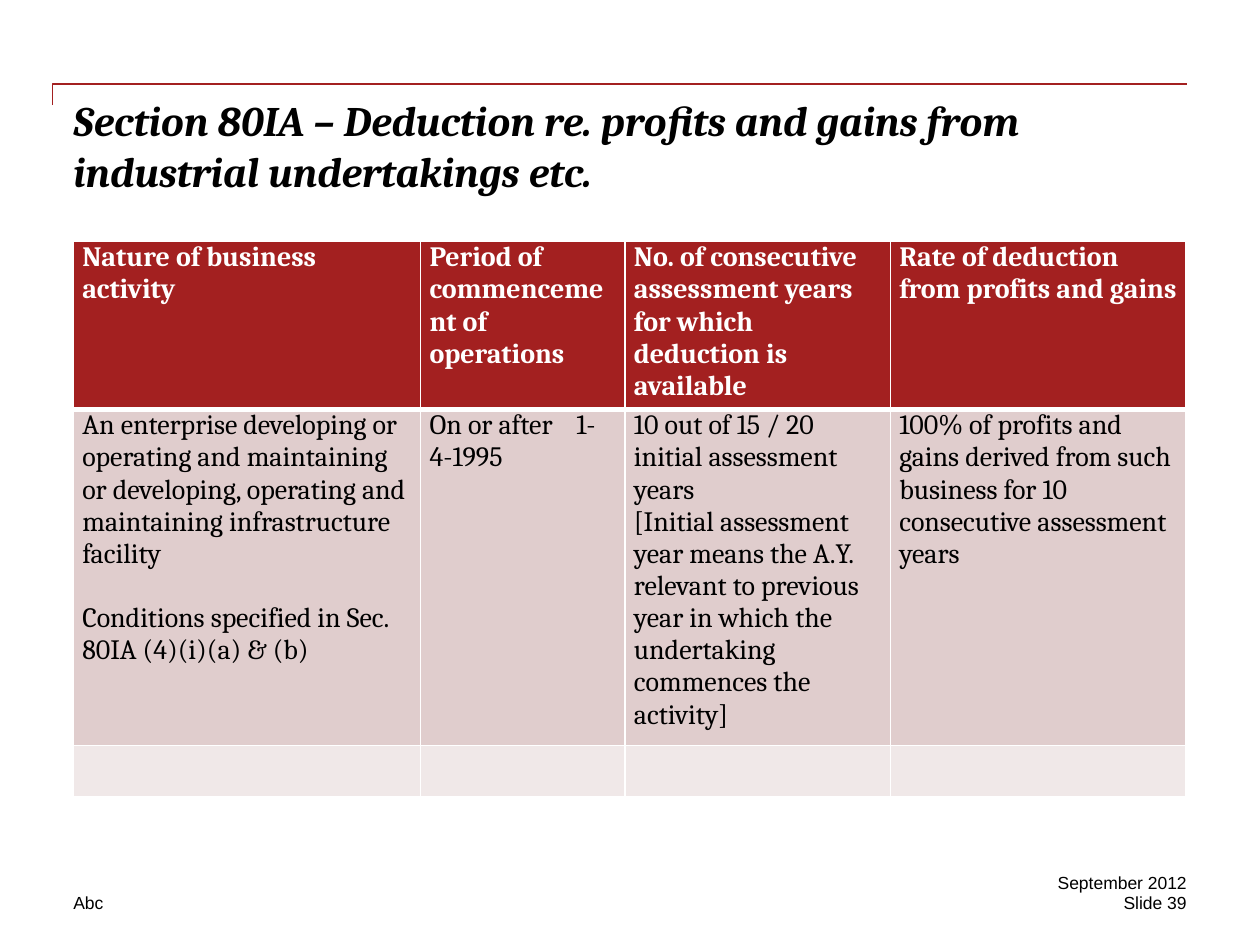
from lxml.etree import SubElement
from pptx import Presentation
from pptx.dml.color import RGBColor
from pptx.enum.text import PP_ALIGN
from pptx.oxml.ns import qn
from pptx.util import Cm, Pt

HUE = {"red": "A32020", "rose": "E0CDCD", "pale": "F0E8E8",
       "black": "000000", "white": "FFFFFF"}


def write(frame, text, font="Cambria", size=16, hue="black", bold=False,
          slant=False, align=PP_ALIGN.LEFT, gap=0):
    frame.word_wrap = True
    for i, line in enumerate(text.split("\n")):
        para = frame.paragraphs[0] if i == 0 else frame.add_paragraph()
        para.alignment = align
        para.space_before = Pt(gap if i else 0)
        run = para.add_run()
        run.text = line
        run.font.name, run.font.size = font, Pt(size)
        run.font.bold, run.font.italic = bold, slant
        run.font.color.rgb = RGBColor.from_string(HUE[hue])


def edge(cell, side, width):
    line = SubElement(cell._tc.get_or_add_tcPr(), qn(f"a:{side}"), w=str(Pt(width)))
    fill = SubElement(line, qn("a:solidFill"))
    SubElement(fill, qn("a:srgbClr"), val=HUE["white"])


deck = Presentation()
deck.slide_width, deck.slide_height = Cm(25.4), Cm(19.05)
slide = deck.slides.add_slide(deck.slide_layouts[6])

# Corner rule above the title
pen = slide.shapes.build_freeform(Cm(1.06), Cm(2.12))
pen.add_line_segments([(Cm(1.06), Cm(1.69)), (Cm(23.92), Cm(1.69))], close=False)
rule = pen.convert_to_shape()
rule.shadow.inherit = False
rule.fill.background()
rule.line.color.rgb = RGBColor.from_string(HUE["red"])
rule.line.width = Pt(1)

# Title and footer
small = {"font": "Arial", "size": 10}
right = {**small, "align": PP_ALIGN.RIGHT}
title = "Section 80IA – Deduction re. profits and gains from industrial undertakings etc."
for text, x, y, w, h, style in [
    (title, 1.48, 1.91, 22.43, 2.54, {"size": 24, "bold": True, "slant": True}),
    ("Abc", 1.48, 17.99, 7.2, 0.42, small),
    ("September 2012", 19.69, 17.57, 4.23, 0.42, right),
    ("Slide 39", 19.69, 17.99, 4.23, 0.42, right),
]:
    frame = slide.shapes.add_textbox(Cm(x), Cm(y), Cm(w), Cm(h)).text_frame
    frame.margin_left = frame.margin_right = frame.margin_top = frame.margin_bottom = 0
    write(frame, text, **style)

# Table of deductions
heads = [
    "Nature of business activity",
    "Period of commencement of operations",
    "No. of consecutive assessment years for which deduction is available",
    "Rate of deduction from profits and gains",
]
facts = [
    "An enterprise developing or operating and maintaining or developing, "
    "operating and maintaining infrastructure facility\n"
    "Conditions specified in Sec. 80IA (4)(i)(a) & (b)",
    "On or after\t1-4-1995",
    "10 out of 15 / 20 initial assessment years\n"
    "[Initial assessment year means the A.Y. relevant to previous year in which "
    "the undertaking commences the activity]",
    "100% of profits and gains derived from such business for 10 consecutive "
    "assessment years",
]
rows = [(heads, 3.23, "red", {"hue": "white", "bold": True}),
        (facts, 6.5, "rose", {}),
        ([""] * 4, 1.03, "pale", {})]
wide = [7.0, 4.12, 5.35, 5.96]
grid = slide.shapes.add_table(3, 4, Cm(1.48), Cm(4.87), Cm(sum(wide)), Cm(10.76)).table
for col, w in zip(grid.columns, wide):
    col.width = Cm(w)
for r, (texts, high, fill, style) in enumerate(rows):
    grid.rows[r].height = Cm(high)
    for c, text in enumerate(texts):
        cell = grid.cell(r, c)
        cell.margin_left = cell.margin_right = Cm(0.18)
        cell.margin_top = cell.margin_bottom = 0
        for side in ("lnL", "lnR", "lnT", "lnB"):
            thick = (r, side) in [(0, "lnB"), (1, "lnT")]
            edge(cell, side, 3 if thick else 1)
        cell.fill.solid()
        cell.fill.fore_color.rgb = RGBColor.from_string(HUE[fill])
        if text:
            write(cell.text_frame, text, gap=18.4 if c == 0 else 0, **style)

# Tab stop for the date in the period column
para = grid.cell(1, 1).text_frame.paragraphs[0]
tabs = SubElement(para._p.get_or_add_pPr(), qn("a:tabLst"))
SubElement(tabs, qn("a:tab"), pos=str(Cm(2.96)), algn="l")

deck.save("out.pptx")
